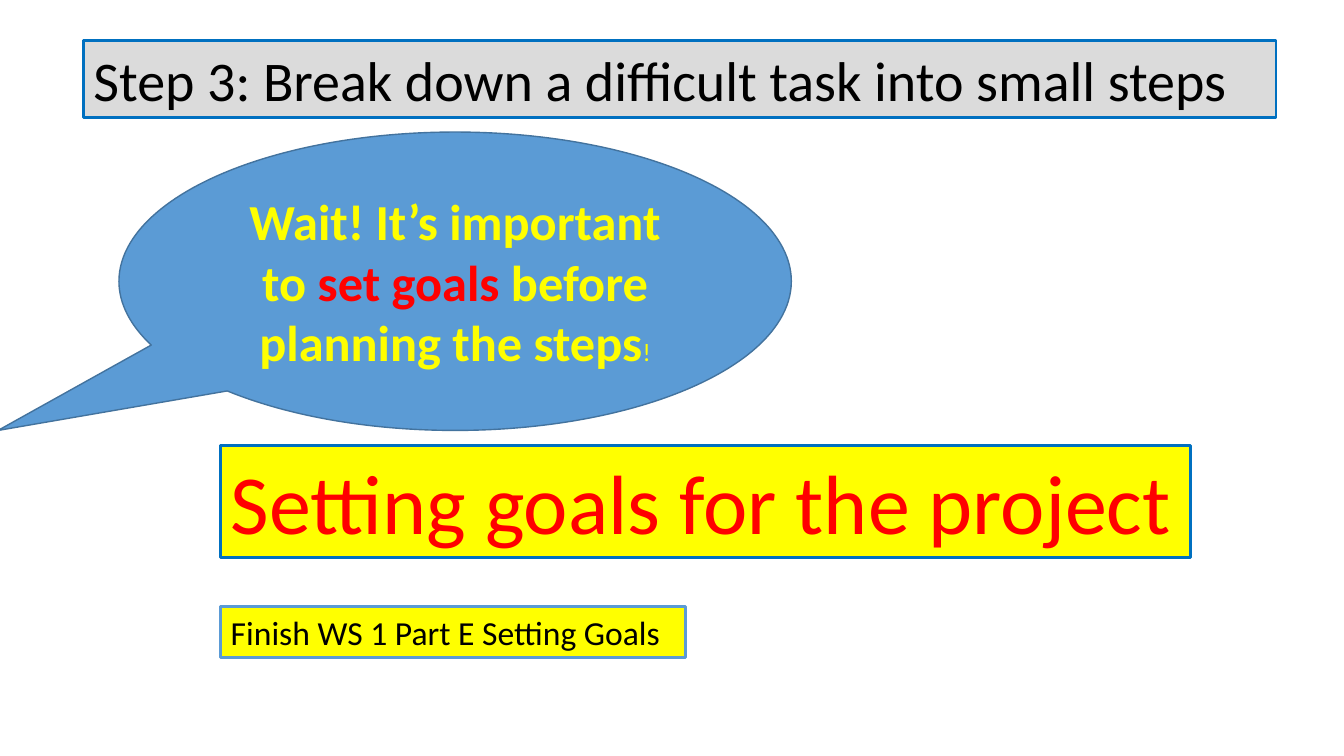
from dataclasses import dataclass

from pptx import Presentation
from pptx.dml.color import RGBColor
from pptx.enum import shapes, text
from pptx.util import Inches, Pt

WIDE, HIGH = Inches(13.333), Inches(7.5)
RED, YELLOW, BLACK = "FF0000", "FFFF00", "000000"
BLUE, SKY = "0070C0", "5B9BD5"


@dataclass
class Run:
    words: str
    size: int
    color: str
    bold: bool = False


@dataclass
class Box:
    area: tuple[float, float, float, float]  # left, top, width, height in % of the slide
    fill: str
    edge: str
    runs: list[Run]
    weight: float = 2


def paint(code: str) -> RGBColor:
    return RGBColor.from_string(code)


def write(para, words: str, *, size: int, color: str, bold: bool = False) -> None:
    run = para.add_run()
    run.text = words
    font = run.font
    font.name, font.size, font.bold = "Calibri", Pt(size), bold
    font.color.rgb = paint(color)


def draw(slide, box: Box, kind=shapes.MSO_SHAPE.RECTANGLE,
         anchor=text.MSO_ANCHOR.TOP, align=text.PP_ALIGN.LEFT):
    sides = (WIDE, HIGH, WIDE, HIGH)
    place = [round(side * part / 100) for side, part in zip(sides, box.area)]
    shape = slide.shapes.add_shape(kind, *place)
    shape.shadow.inherit = False
    shape.fill.solid()
    shape.fill.fore_color.rgb = paint(box.fill)
    shape.line.color.rgb = paint(box.edge)
    shape.line.width = Pt(box.weight)
    frame = shape.text_frame
    frame.word_wrap = True
    frame.vertical_anchor = anchor
    para = frame.paragraphs[0]
    para.alignment = align
    for run in box.runs:
        write(para, run.words, size=run.size, color=run.color, bold=run.bold)
    return shape


LEFT = 16.43  # shared left edge of the goal and task boxes
GOAL = Box((LEFT, 58.93, 72.15, 14.8), YELLOW, BLUE,
           [Run("Setting goals for the project", 60, RED)])
STEP = Box((6.22, 5.33, 88.73, 10.27), "DBDBDB", BLUE,
           [Run("Step 3: Break down a difficult task into small steps", 40, BLACK)])
TASK = Box((LEFT, 80.27, 34.58, 6.67), YELLOW, SKY,
           [Run("Finish WS 1 Part E Setting Goals", 24, BLACK)])
HINT = Box((8.85, 17.47, 50.03, 39.47), SKY, "43739E",
           [Run("Wait! It’s important to ", 36, YELLOW, True),
            Run("set goals ", 36, RED, True),
            Run("before planning the steps", 36, YELLOW, True),
            Run("!", 18, YELLOW)], weight=1)


def main() -> None:
    deck = Presentation()
    deck.slide_width, deck.slide_height = WIDE, HIGH
    slide = deck.slides.add_slide(deck.slide_layouts[6])

    # Framed text
    for box in (GOAL, STEP, TASK):
        draw(slide, box)

    # Speech bubble with its tail to the lower left
    bubble = draw(slide, HINT, shapes.MSO_SHAPE.OVAL_CALLOUT,
                  text.MSO_ANCHOR.MIDDLE, text.PP_ALIGN.CENTER)
    bubble.adjustments[0] = -0.68
    bubble.adjustments[1] = 0.5

    deck.save("out.pptx")


if __name__ == "__main__":
    main()
